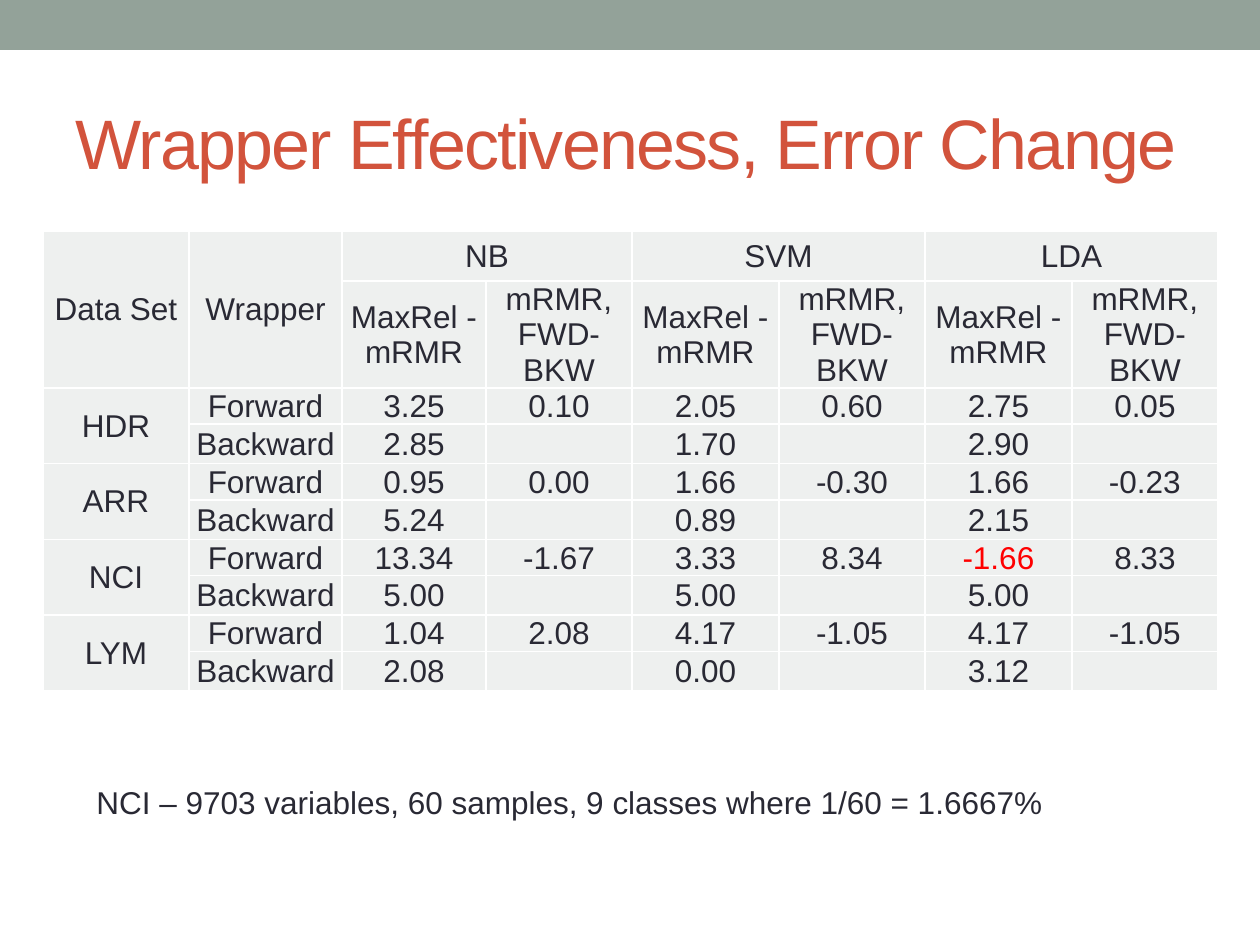
from dataclasses import dataclass

from lxml import etree
from pptx import Presentation
from pptx import util as u
from pptx.dml.color import RGBColor
from pptx.enum import shapes, text
from pptx.oxml import ns

EMU_PER_PX = 914400 / 126

SAGE = RGBColor(0x93, 0xA2, 0x99)
RUST = RGBColor(0xD2, 0x53, 0x3C)
INK = RGBColor(0x29, 0x29, 0x34)
RED = RGBColor(0xFF, 0x00, 0x00)
PALE = RGBColor(0xEE, 0xF0, 0xEF)

COLUMN_WIDTHS = [146, 153, 144, 146, 147, 146, 147, 146]
ROW_HEIGHTS = [50, 106] + [36] * 8
CLASSIFIERS = ["NB", "SVM", "LDA"]
MEASURES = ["MaxRel - mRMR", "mRMR, FWD-BKW"]


@dataclass
class Box:
    left: int
    top: int
    width: int
    height: int


@dataclass
class DataSet:
    name: str
    forward: list[str]  # both measures for each classifier
    backward: list[str]  # first measure for each classifier


DATA_SETS = [
    DataSet("HDR", ["3.25", "0.10", "2.05", "0.60", "2.75", "0.05"], ["2.85", "1.70", "2.90"]),
    DataSet("ARR", ["0.95", "0.00", "1.66", "-0.30", "1.66", "-0.23"], ["5.24", "0.89", "2.15"]),
    DataSet("NCI", ["13.34", "-1.67", "3.33", "8.34", "-1.66", "8.33"], ["5.00", "5.00", "5.00"]),
    DataSet("LYM", ["1.04", "2.08", "4.17", "-1.05", "4.17", "-1.05"], ["2.08", "0.00", "3.12"]),
]
HIGHLIGHTED_CELL = (6, 6)


def px(length: int) -> u.Emu:
    return u.Emu(round(length * EMU_PER_PX))


def bounds(box: Box) -> list[u.Emu]:
    return [px(n) for n in (box.left, box.top, box.width, box.height)]


def set_values(target, values: dict) -> None:
    for name, value in values.items():
        setattr(target, name, value)


def write(paragraph, words: str, size: int, color: RGBColor, alignment=text.PP_ALIGN.LEFT):
    paragraph.alignment = alignment
    run = paragraph.add_run()
    run.text = words
    set_values(run.font, {"name": "Arial", "size": u.Pt(size), "bold": False})
    run.font.color.rgb = color
    return run


def add_borders(cell) -> None:
    properties = cell._tc.get_or_add_tcPr()
    for side in ("lnL", "lnR", "lnT", "lnB"):
        line = etree.SubElement(properties, ns.qn(f"a:{side}"), w=str(u.Pt(1)))
        fill = etree.SubElement(line, ns.qn("a:solidFill"))
        etree.SubElement(fill, ns.qn("a:srgbClr"), val="FFFFFF")


def format_cell(cell, words: str, color: RGBColor) -> None:
    set_values(cell, {
        "vertical_anchor": text.MSO_ANCHOR.MIDDLE,
        "margin_left": px(1), "margin_right": px(1),
        "margin_top": px(1), "margin_bottom": 0,
    })
    add_borders(cell)
    cell.fill.solid()
    cell.fill.fore_color.rgb = PALE
    if words:
        write(cell.text_frame.paragraphs[0], words, 18, color, text.PP_ALIGN.CENTER)


def table_rows() -> list[list[str]]:
    classifier_row = ["Data Set", "Wrapper"]
    for classifier in CLASSIFIERS:
        classifier_row += [classifier, ""]
    rows = [classifier_row, ["", ""] + MEASURES * len(CLASSIFIERS)]
    for data_set in DATA_SETS:
        rows.append([data_set.name, "Forward"] + data_set.forward)
        rows.append(["", "Backward"] + [v for value in data_set.backward for v in (value, "")])
    return rows


def add_results_table(slide, box: Box) -> None:
    rows = table_rows()
    frame = slide.shapes.add_table(len(rows), len(COLUMN_WIDTHS), *bounds(box))
    table = frame.table
    set_values(table, {"first_row": False, "horz_banding": False})
    for column, width in zip(table.columns, COLUMN_WIDTHS):
        column.width = px(width)
    for row, height in zip(table.rows, ROW_HEIGHTS):
        row.height = px(height)

    for r, row in enumerate(rows):
        for c, words in enumerate(row):
            color = RED if (r, c) == HIGHLIGHTED_CELL else INK
            format_cell(table.cell(r, c), words, color)

    # Headers and data set names span two cells
    table.cell(0, 1).merge(table.cell(1, 1))
    for r in range(0, len(rows), 2):
        table.cell(r, 0).merge(table.cell(r + 1, 0))
    for c in range(2, len(COLUMN_WIDTHS), 2):
        table.cell(0, c).merge(table.cell(0, c + 1))


def add_top_band(slide, box: Box) -> None:
    band = slide.shapes.add_shape(shapes.MSO_SHAPE.RECTANGLE, *bounds(box))
    band.shadow.inherit = False
    band.fill.solid()
    band.fill.fore_color.rgb = SAGE
    band.line.fill.background()


def format_title(slide, words: str, box: Box) -> None:
    title = slide.shapes.title
    set_values(title, dict(zip(("left", "top", "width", "height"), bounds(box))))
    set_values(title.text_frame, {
        "vertical_anchor": text.MSO_ANCHOR.MIDDLE,
        "word_wrap": True, "auto_size": text.MSO_AUTO_SIZE.NONE,
    })
    run = write(title.text_frame.paragraphs[0], words, 40, RUST)
    run.font._element.set("spc", "-100")


def add_note(slide, words: str, box: Box) -> None:
    note = slide.shapes.add_textbox(*bounds(box))
    set_values(note.text_frame, {
        "word_wrap": True, "auto_size": text.MSO_AUTO_SIZE.SHAPE_TO_FIT_TEXT,
    })
    write(note.text_frame.paragraphs[0], words, 18, INK)


def main() -> None:
    presentation = Presentation()
    set_values(presentation, {"slide_width": px(1260), "slide_height": px(945)})
    slide = presentation.slides.add_slide(presentation.slide_layouts[5])

    add_top_band(slide, Box(0, 0, 1260, 50))
    format_title(slide, "Wrapper Effectiveness, Error Change", Box(63, 73, 1134, 136))
    add_results_table(slide, Box(43, 231, sum(COLUMN_WIDTHS), sum(ROW_HEIGHTS)))
    add_note(
        slide,
        "NCI – 9703 variables, 60 samples, 9 classes where 1/60 = 1.6667%",
        Box(84, 777, 1113, 50),
    )
    presentation.save("out.pptx")


if __name__ == "__main__":
    main()
